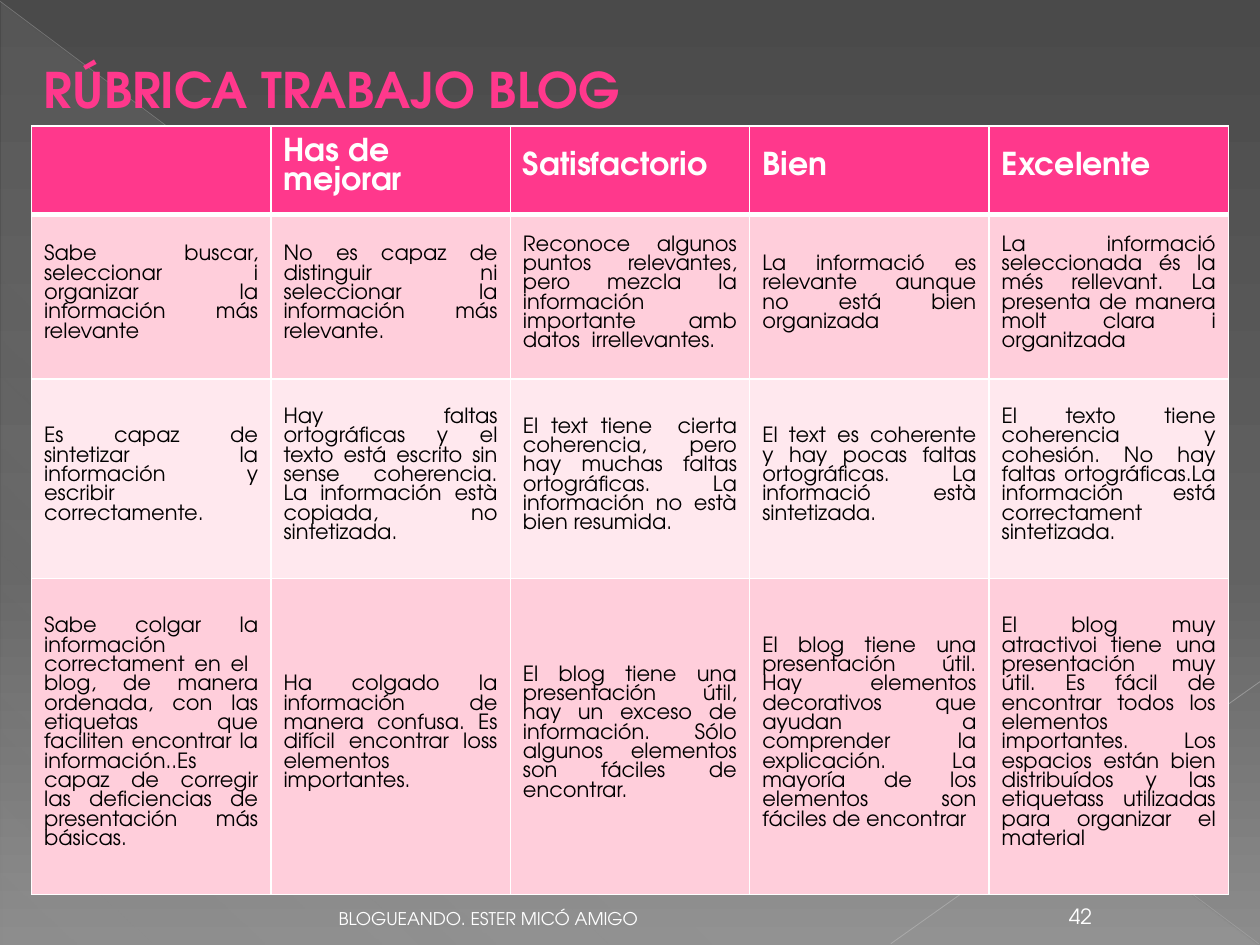
from lxml.etree import SubElement
from pptx import Presentation
from pptx.dml.color import RGBColor
from pptx.enum.shapes import MSO_CONNECTOR, MSO_SHAPE
from pptx.enum.text import MSO_ANCHOR, PP_ALIGN
from pptx.oxml import parse_xml
from pptx.oxml.ns import nsdecls, qn
from pptx.util import Inches, Pt

FONT = "TeX Gyre Adventor"
PINK = RGBColor(0xFF, 0x38, 0x8C)
ROSE = RGBColor(0xFF, 0xCE, 0xDB)
PALE = RGBColor(0xFF, 0xE8, 0xEE)
WHITE = RGBColor(0xFF, 0xFF, 0xFF)
BLACK = RGBColor(0, 0, 0)
SILVER = RGBColor(0xBF, 0xBF, 0xBF)
GREY = RGBColor(0xC6, 0xC6, 0xC6)

HEADS = ["", "Has de mejorar", "Satisfactorio", "Bien", "Excelente"]
BODY = [
    ["Sabe buscar, seleccionar i organizar la información más relevante ",
     "No es capaz de distinguir ni seleccionar la información más relevante.",
     "Reconoce  algunos puntos relevantes, pero mezcla la información "
     "importante amb datos  irrellevantes.",
     "La informació es relevante aunque no está bien organizada",
     "La informació seleccionada és la més rellevant. La presenta de manera "
     "molt clara i organitzada"],
    ["Es capaz de sintetizar la información  y escribir correctamente.",
     "Hay faltas ortográficas y el texto está escrito sin sense coherencia. "
     "La información està copiada, no sintetizada.",
     "El text tiene  cierta coherencia, pero hay muchas faltas ortográficas. "
     "La información no està bien resumida.",
     "El text es coherente y hay pocas faltas ortográficas. "
     "La informació està sintetizada.",
     "El texto tiene coherencia y cohesión. No hay faltas ortográficas."
     "La información está correctament sintetizada."],
    ["Sabe colgar la información correctament en el  blog, de manera ordenada, "
     "con las etiquetas que faciliten encontrar la información..Es capaz de "
     "corregir las deficiencias de presentación más básicas.",
     "Ha colgado la información de manera confusa. Es difícil encontrar loss "
     "elementos importantes.",
     "El blog tiene una presentación útil, hay un exceso de información. "
     "Sólo algunos elementos son fáciles de encontrar.",
     "El blog tiene una presentación útil. Hay elementos decorativos que "
     "ayudan a comprender la explicación. La mayoría de los elementos son "
     "fáciles de encontrar",
     "El blog muy atractivoi tiene una presentación muy útil. Es fácil de "
     "encontrar todos los elementos importantes. Los espacios están bien "
     "distribuídos y las etiquetass utilizadas para organizar el material"],
]
HEIGHTS = [0.7, 1.31, 1.58, 2.51]
FILLS = [PINK, ROSE, PALE, ROSE]


def assign(target, values):
    for name, value in values.items():
        setattr(target, name, value)


def fade(root, stops, angle):
    """Swap the first solid fill under root for a gradient."""
    marks = "".join(
        f'<a:gs pos="{pos * 1000}"><a:srgbClr val="{tint}">'
        f'<a:alpha val="{alpha * 1000}"/></a:srgbClr></a:gs>'
        for pos, tint, alpha in stops)
    old = root.find(".//" + qn("a:solidFill"))
    old.getparent().replace(old, parse_xml(
        f'<a:gradFill {nsdecls("a")} rotWithShape="1"><a:gsLst>{marks}</a:gsLst>'
        f'<a:lin ang="{angle * 60000}" scaled="0"/></a:gradFill>'))


def add_ray(slide, start, end, tint, width, alpha):
    ray = slide.shapes.add_connector(
        MSO_CONNECTOR.STRAIGHT, *map(Inches, start + end))
    ray.line.color.rgb = tint
    ray.line.width = Pt(width)
    props = ray._element.spPr
    SubElement(props.find(".//" + qn("a:srgbClr")), qn("a:alpha"),
               val=str(alpha * 1000))
    SubElement(props, qn("a:effectLst"))


def write(frame, text, size, tint, bold=False, **layout):
    para = frame.paragraphs[0]
    assign(para, layout)
    run = para.add_run()
    run.text = text
    assign(run.font, {"name": FONT, "size": Pt(size), "bold": bold})
    run.font.color.rgb = tint


def add_label(slide, box, anchor, *words, **layout):
    frame = slide.shapes.add_textbox(*map(Inches, box)).text_frame
    assign(frame, {"word_wrap": True, "vertical_anchor": anchor})
    write(frame, *words, **layout)


def edge(cell, widths):
    """Draw white borders; widths are left, right, top, bottom in points."""
    props = cell._tc.get_or_add_tcPr()
    for spot, (side, width) in enumerate(zip("LRTB", widths)):
        props.insert(spot, parse_xml(
            f'<a:ln{side} {nsdecls("a")} w="{Pt(width)}"><a:solidFill>'
            f'<a:srgbClr val="{WHITE}"/></a:solidFill></a:ln{side}>'))


def add_rubric(slide):
    rows = [HEADS] + BODY
    table = slide.shapes.add_table(
        len(rows), len(HEADS), Inches(0.25), Inches(1),
        Inches(9.5), Inches(sum(HEIGHTS))).table
    for col in table.columns:
        col.width = Inches(9.5 / len(HEADS))
    for r, texts in enumerate(rows):
        table.rows[r].height = Inches(HEIGHTS[r])
        for c, text in enumerate(texts):
            cell = table.cell(r, c)
            assign(cell, {
                "vertical_anchor": MSO_ANCHOR.MIDDLE,
                "margin_left": Inches(0.1), "margin_right": Inches(0.1),
                "margin_top": 0, "margin_bottom": Inches(0.05)})
            cell.fill.solid()
            cell.fill.fore_color.rgb = FILLS[r]
            edge(cell, (1, 1, 3 if r == 1 else 1, 3 if r == 0 else 1))
            if r == 0 and text:
                write(cell.text_frame, text, 18, WHITE, True,
                      line_spacing=0.99)
            elif text:
                write(cell.text_frame, text, 12, BLACK, line_spacing=0.99,
                      alignment=PP_ALIGN.JUSTIFY)


def add_backdrop(slide):
    slide.background.fill.solid()
    fade(slide._element, [(0, "4A4A4A", 100), (60, "626262", 100),
                          (100, "8C8C8C", 100)], 90)
    wedge = slide.shapes.add_shape(
        MSO_SHAPE.RIGHT_TRIANGLE, *map(Inches, (0.01, 0.02, 9.98, 7.48)))
    wedge.shadow.inherit = False
    wedge.line.fill.background()
    wedge.fill.solid()
    fade(wedge._element, [(0, "D2D2D2", 10), (70, "D2D2D2", 8),
                          (100, "D2D2D2", 1)], 133)
    add_ray(slide, (0, 0.01), (9.99, 7.49), SILVER, 0.39, 35)
    add_ray(slide, (10, 5.41), (7.07, 7.49), GREY, 0.47, 45)


def main():
    deck = Presentation()
    assign(deck, {"slide_width": Inches(10), "slide_height": Inches(7.5)})
    slide = deck.slides.add_slide(deck.slide_layouts[6])
    add_backdrop(slide)
    add_rubric(slide)
    add_label(slide, (0.25, 0.42, 8.05, 0.57), MSO_ANCHOR.TOP,
              "RÚBRICA TRABAJO BLOG", 28, PINK, True)
    add_label(slide, (0.5, 7.09, 4.66, 0.33), MSO_ANCHOR.BOTTOM,
              "BLOGUEANDO. ESTER MICÓ AMIGO", 10, WHITE,
              alignment=PP_ALIGN.RIGHT)
    add_label(slide, (8.3, 7.09, 0.55, 0.33), MSO_ANCHOR.BOTTOM,
              "42", 12, WHITE, alignment=PP_ALIGN.CENTER)
    deck.save("out.pptx")


if __name__ == "__main__":
    main()
